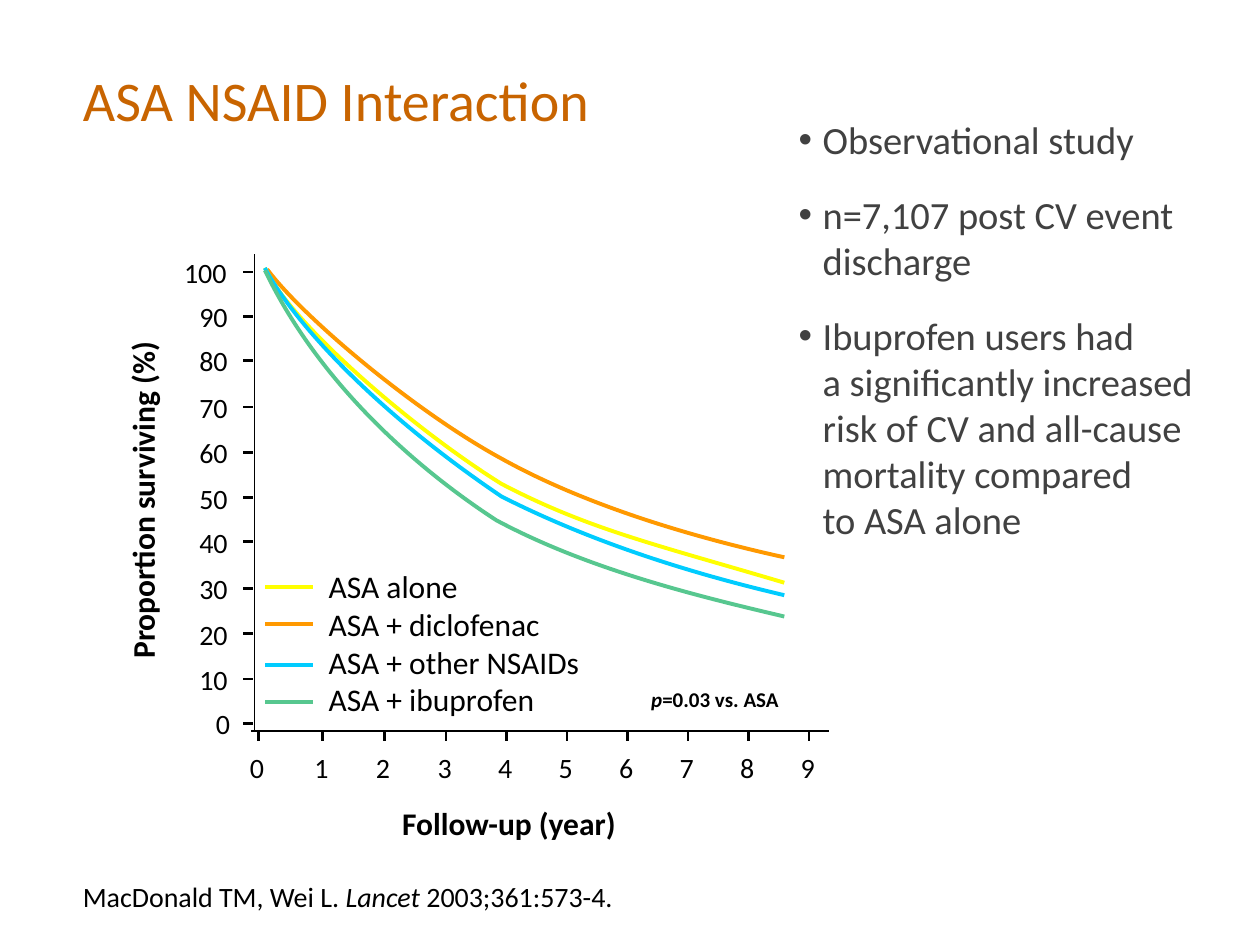
import lxml.etree
import pptx
import pptx.dml.color
import pptx.enum.shapes
import pptx.enum.text
import pptx.oxml.ns
import pptx.util

PX = 9144
BLACK = "000000"
ALIGN = pptx.enum.text.PP_ALIGN
ANCHOR = pptx.enum.text.MSO_ANCHOR
AUTO_SIZE = pptx.enum.text.MSO_AUTO_SIZE

YELLOW, ORANGE, CYAN, GREEN = "FFFF00", "FF9900", "00CCFF", "57C78F"
LEGEND = [
    ("ASA alone", YELLOW, 466),
    ("ASA + diclofenac", ORANGE, 495),
    ("ASA + other NSAIDs", CYAN, 528),
    ("ASA + ibuprofen", GREEN, 557),
]
SURVIVAL_CURVES = [
    (ORANGE, [(213, 215), (242, 253), (330, 327), (398, 364), (466, 402), (553, 427), (621, 442)]),
    (YELLOW, [(211, 214), (232, 257), (326, 339), (398, 384), (467, 420), (520, 432), (621, 462)]),
    (CYAN, [(211, 214), (232, 253), (293, 323), (398, 394), (473, 432), (553, 456), (621, 472)]),
    (GREEN, [(211, 216), (256, 309), (337, 376), (394, 413), (467, 452), (553, 473), (621, 489)]),
]
PERCENT_TICKS = [574, 539, 503, 467, 430, 395, 359, 323, 286, 251, 216]
YEAR_TICKS = [205, 256, 305, 354, 402, 450, 498, 546, 594, 642]
PERCENT_LABEL_SPANS = {1: (161, 32), 2: (148, 43), 3: (136, 54)}
FINDINGS = [
    "Observational study",
    "n=7,107 post CV event discharge",
    "Ibuprofen users had \va significantly increased \vrisk of CV and all-cause \vmortality compared \vto ASA alone",
]


def emu(pixels):
    """Turn pixels into EMU."""
    return pptx.util.Emu(round(pixels * PX))


def rgb(value):
    """Turn a hex string into a colour."""
    return pptx.dml.color.RGBColor.from_string(value)


def add_text(slide, box, lines, size, color=BLACK, bold=False, italic=None,
             align=ALIGN.LEFT, anchor=ANCHOR.TOP, wrap=True, grow=True):
    """Add a text box with one paragraph per line and one optional italic phrase."""
    shape = slide.shapes.add_textbox(*map(emu, box))
    frame = shape.text_frame
    frame.word_wrap = wrap
    frame.auto_size = AUTO_SIZE.SHAPE_TO_FIT_TEXT if grow else AUTO_SIZE.NONE
    frame.vertical_anchor = anchor
    frame.text = "\n".join(lines)
    for paragraph in frame.paragraphs:
        paragraph.alignment = align
        if italic:
            parts = paragraph.text.partition(italic)
            paragraph.clear()
            for part in filter(None, parts):
                run = paragraph.add_run()
                run.text = part
                run.font.italic = part == italic
        for run in paragraph.runs:
            run.font.name = "Calibri"
            run.font.size = pptx.util.Pt(size)
            run.font.bold = bold
            run.font.color.rgb = rgb(color)
    return shape


def add_bullets(slide, box, lines, size, color):
    """Add a text box of bulleted paragraphs."""
    shape = add_text(slide, box, lines, size, color, grow=False)
    for index, paragraph in enumerate(shape.text_frame.paragraphs):
        properties = paragraph._p.get_or_add_pPr()
        properties.set("marL", str(emu(19)))
        properties.set("indent", str(-emu(19)))
        for tag, name, value in (("a:buFont", "typeface", "Arial"), ("a:buChar", "char", "•")):
            lxml.etree.SubElement(properties, pptx.oxml.ns.qn(tag)).set(name, value)
        paragraph.space_before = pptx.util.Pt(4.4 if index else 0)
        paragraph.space_after = pptx.util.Pt(12)
        paragraph.font.size = pptx.util.Pt(size)


def style_line(shape, color, width):
    """Set colour, width and square ends of a line."""
    shape.line.color.rgb = rgb(color)
    shape.line.width = pptx.util.Pt(width)
    shape._element.spPr.find(pptx.oxml.ns.qn("a:ln")).set("cap", "sq")


def add_line(slide, start, end, color=BLACK, width=1.5):
    """Add a straight line without shadow."""
    line = slide.shapes.add_connector(
        pptx.enum.shapes.MSO_CONNECTOR.STRAIGHT, *map(emu, (*start, *end)))
    style_line(line, color, width)
    lxml.etree.SubElement(line._element.spPr, pptx.oxml.ns.qn("a:effectLst"))


def add_curve(slide, controls, color):
    """Add an open outline of cubic curves from its control points."""
    builder = slide.shapes.build_freeform(*controls[0], scale=PX)
    builder.add_line_segments(controls[1:], close=False)
    shape = builder.convert_to_shape()
    segments = list(shape._element.iter(pptx.oxml.ns.qn("a:lnTo")))
    for first in range(0, len(segments), 3):
        cubic = lxml.etree.Element(pptx.oxml.ns.qn("a:cubicBezTo"))
        segments[first].addprevious(cubic)
        for segment in segments[first:first + 3]:
            cubic.append(segment[0])
            segment.getparent().remove(segment)
    shape.shadow.inherit = False
    shape.fill.background()
    style_line(shape, color, 2.25)


def add_axes(slide):
    """Add both axes with ticks, labels and titles."""
    for index, y in enumerate(PERCENT_TICKS):
        label = str(10 * index)
        left, width = PERCENT_LABEL_SPANS[len(label)]
        add_line(slide, (200, y), (194, y))
        add_text(slide, (left, y - 18, width, 37), [label], 16,
                 align=ALIGN.CENTER, wrap=False)
    for year, x in enumerate(YEAR_TICKS):
        add_line(slide, (x, 587), (x, 581))
        add_text(slide, (x - 17, 591, 32, 37), [str(year)], 16,
                 align=ALIGN.CENTER, wrap=False)
    add_line(slide, (200, 580), (657, 580), width=1)
    add_line(slide, (202, 202), (202, 580), width=1)
    title = add_text(slide, (-24, 377, 274, 40), ["Proportion surviving (%)"], 18,
                     bold=True, align=ALIGN.CENTER, wrap=False)
    title.rotation = 270
    add_text(slide, (258, 633, 292, 40), ["Follow-up (year)"], 18,
             bold=True, align=ALIGN.CENTER)


def add_legend(slide):
    """Add the legend names and their colour strokes."""
    add_text(slide, (251, 445, 221, 131), [name for name, _, _ in LEGEND], 18, wrap=False)
    for _, color, y in LEGEND:
        add_line(slide, (247, y), (212, y), color, 2.25)


def main():
    """Build the slide and save it."""
    presentation = pptx.Presentation()
    presentation.slide_width = emu(1000)
    presentation.slide_height = emu(750)
    slide = presentation.slides.add_slide(presentation.slide_layouts[6])
    add_text(slide, (56, 21, 940, 116), ["ASA NSAID Interaction"], 32, "C86400",
             anchor=ANCHOR.MIDDLE, grow=False)
    add_bullets(slide, (624, 87, 379, 237), FINDINGS, 22, "414141")
    add_axes(slide)
    for color, controls in SURVIVAL_CURVES:
        add_curve(slide, controls, color)
    add_legend(slide)
    add_text(slide, (506, 540, 123, 30), ["p=0.03 vs. ASA"], 12, bold=True,
             italic="p", align=ALIGN.CENTER, wrap=False)
    add_text(slide, (56, 693, 487, 37), ["MacDonald TM, Wei L. Lancet 2003;361:573-4."], 16,
             italic="Lancet")
    presentation.save("out.pptx")


if __name__ == "__main__":
    main()
